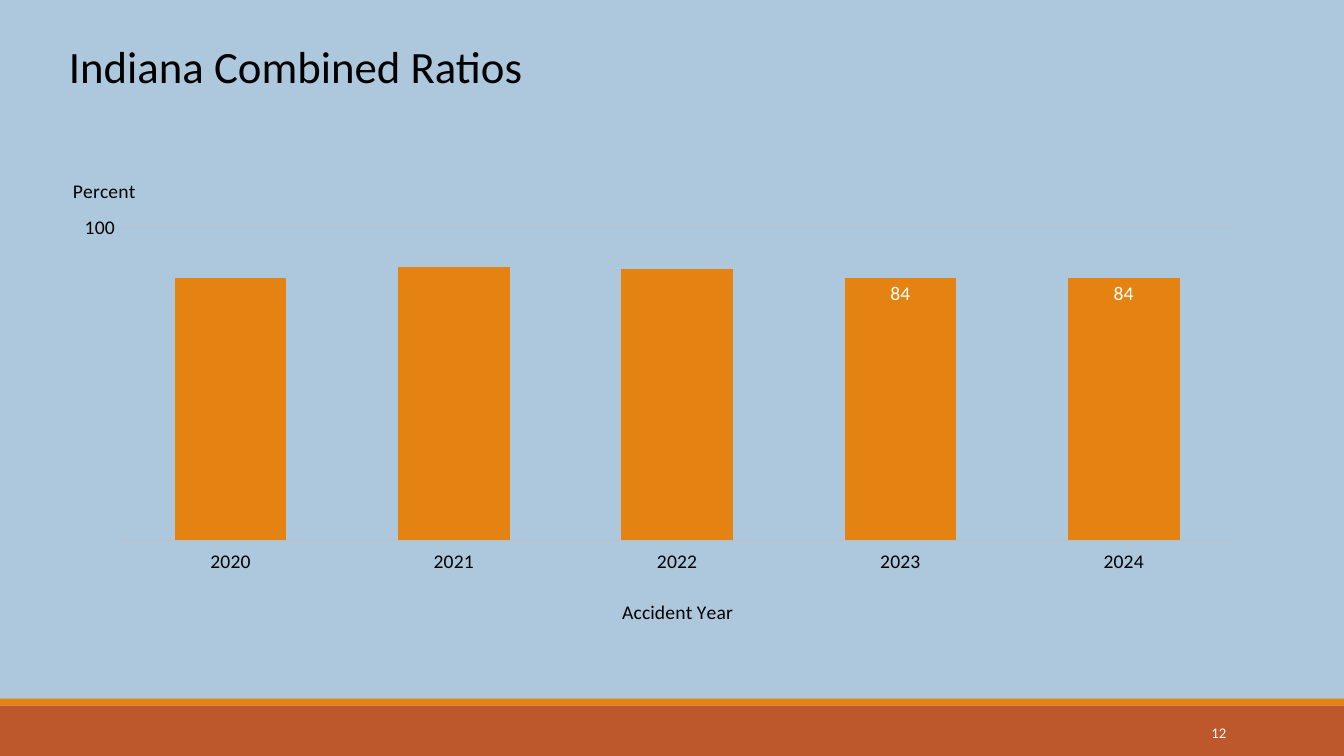
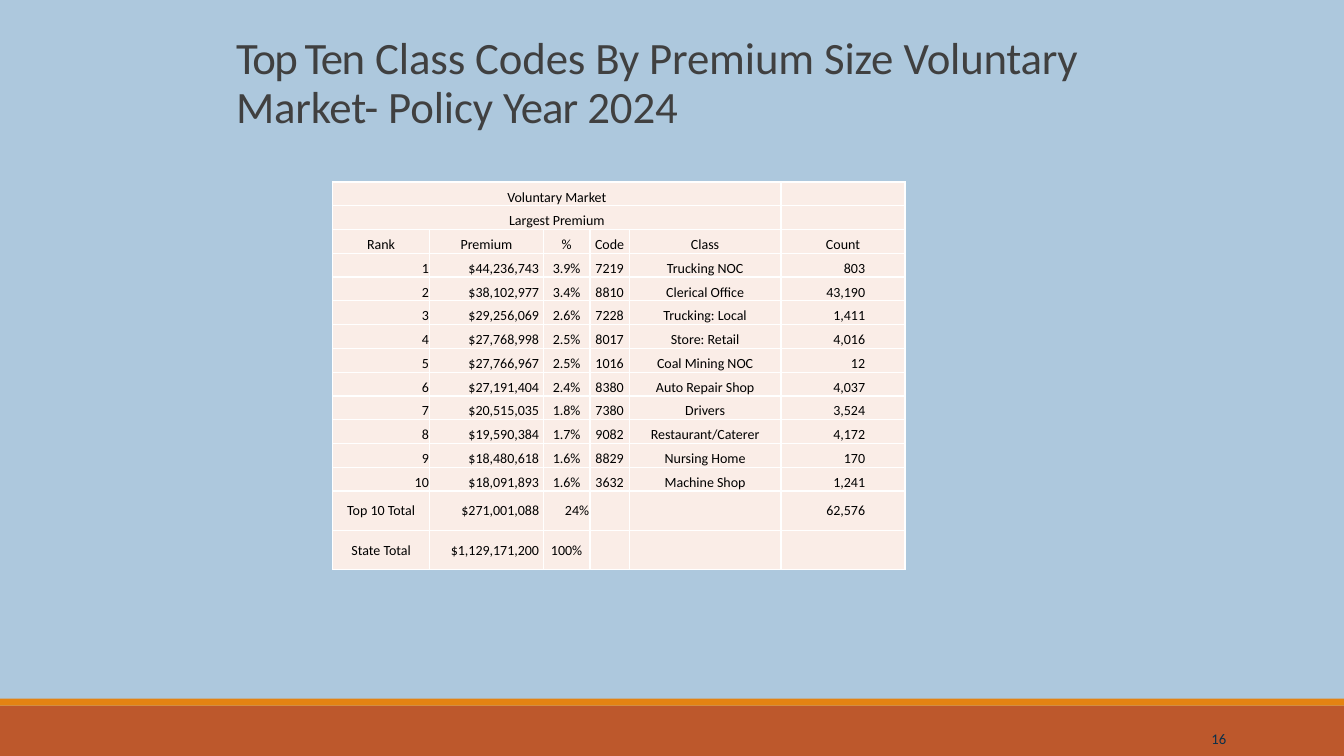
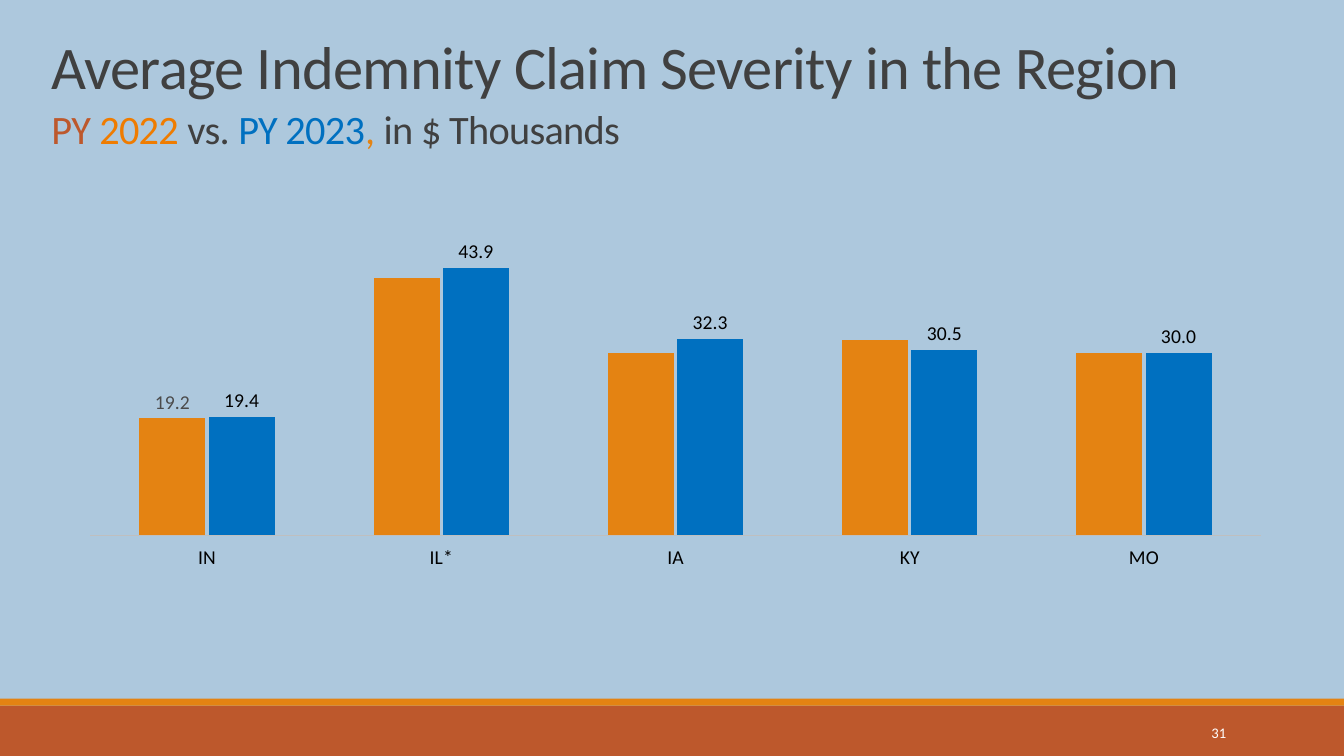
from lxml import etree
from pptx import Presentation
from pptx.chart.data import CategoryChartData
from pptx.dml.color import RGBColor
from pptx.enum.chart import XL_CHART_TYPE, XL_LABEL_POSITION, XL_TICK_LABEL_POSITION, XL_TICK_MARK
from pptx.enum.shapes import MSO_SHAPE
from pptx.enum.text import MSO_ANCHOR, MSO_AUTO_SIZE, PP_ALIGN
from pptx.oxml.ns import qn
from pptx.util import Pt

COLUMNS = XL_CHART_TYPE.COLUMN_CLUSTERED
INSIDE, OUTSIDE = XL_LABEL_POSITION.INSIDE_END, XL_LABEL_POSITION.OUTSIDE_END
LOW, NO_LABELS = XL_TICK_LABEL_POSITION.LOW, XL_TICK_LABEL_POSITION.NONE
NO_TICKS = XL_TICK_MARK.NONE
RECT = MSO_SHAPE.RECTANGLE
TOP, MIDDLE, BOTTOM = MSO_ANCHOR.TOP, MSO_ANCHOR.MIDDLE, MSO_ANCHOR.BOTTOM
LEFT, CENTER, RIGHT = PP_ALIGN.LEFT, PP_ALIGN.CENTER, PP_ALIGN.RIGHT

# Shared look
FONT = "Calibri"
SKY, RUST, ORANGE, BLUE = "ADC8DD", "BD582C", "E48312", "0070C0"
BLACK, WHITE, DARK, NAVY = "000000", "FFFFFF", "404040", "0A304A"
LIGHT, RULE, CREAM = "D9D9D9", "BFBFBF", "FAEDE7"
BANDS = [((0, 504, 960, 36), RUST), ((0, 499, 960, 5), ORANGE)]
NUMBER_BOX = (780, 508.5, 103, 29)

# Titles: paragraphs of runs (text, size, colour, letter spacing)
RATIO_TITLE = [[("Indiana Combined Ratios", 32, BLACK, 0)]]
CLASS_TITLE = [[(text, 32, DARK, gap) for text, gap in [
    ("Top Ten", -1.2), (" Class Codes By Premium Size ", -0.1),
    ("Voluntary Market- ", -0.2), ("Policy ", -0.1), ("Year ", -0.7), ("2024", -0.1)]]]
SEVERITY_TITLE = [
    [("Average Indemnity Claim Severity in the Region", 43.2, DARK, -0.5)],
    [(text, 28.8, color, -0.5) for text, color in [
        ("PY ", RUST), ("2022 ", "EF7C00"), ("vs. ", DARK), ("PY 2023", BLUE),
        (",", ORANGE), (" in $ Thousands", DARK)]]]

# Charts: series are (name, values, colour, {labelled point: label colour})
YEARS = ["2020", "2021", "2022", "2023", "2024"]
RATIOS = [("Series 1", [83.8, 87.5, 86.7, 84, 83.9], ORANGE, {3: WHITE, 4: WHITE})]
STATES = ["IN", "IL*", "IA", "KY", "MO"]
SEVERITY = [
    ("Series 1", [19.2, 42.3, 30, 32, 29.9], ORANGE, {0: "4B4B4B"}),
    ("Series 2", [19.4, 43.9, 32.3, 30.5, 30], BLUE, dict.fromkeys(range(5), BLACK))]

# Table
SPANNING = ["Voluntary Market", "Largest Premium"]
HEADINGS = ["Rank", "Premium", "%", "Code", "Class", "Count"]
CLASSES = [
    ("$44,236,743", "3.9%", "7219", "Trucking NOC", "803"),
    ("$38,102,977", "3.4%", "8810", "Clerical Office", "43,190"),
    ("$29,256,069", "2.6%", "7228", "Trucking: Local", "1,411"),
    ("$27,768,998", "2.5%", "8017", "Store: Retail", "4,016"),
    ("$27,766,967", "2.5%", "1016", "Coal Mining NOC", "12"),
    ("$27,191,404", "2.4%", "8380", "Auto Repair Shop", "4,037"),
    ("$20,515,035", "1.8%", "7380", "Drivers", "3,524"),
    ("$19,590,384", "1.7%", "9082", "Restaurant/Caterer", "4,172"),
    ("$18,480,618", "1.6%", "8829", "Nursing Home", "170"),
    ("$18,091,893", "1.6%", "3632", "Machine Shop", "1,241")]
TOTALS = [("Top 10 Total", "$271,001,088", "24%", "", "", "62,576"),
          ("State Total", "$1,129,171,200", "100%", "", "", "")]
COL_WIDTHS = [69.5, 81, 33.5, 28, 108.5, 88.5]
BODY_ALIGN = [RIGHT, RIGHT, CENTER, CENTER, CENTER, RIGHT]
RIGHT_MARGINS = [0.7, 3, 0.7, 0.7, 0.7, 28.5]


def rgb(color):
    return RGBColor.from_string(color)


def pts(box):
    return [Pt(v) for v in box]


def style(font, size, color):
    font.name, font.size, font.bold = FONT, Pt(size), False
    font.color.rgb = rgb(color)


def add_run(p, text, size, color, spacing=0):
    r = p.add_run()
    r.text = text
    style(r.font, size, color)
    if spacing:
        r._r.get_or_add_rPr().set("spc", str(round(spacing * 100)))


def add_slide(prs, number, title, box, anchor, line_spacing=1.0, gap=0,
              number_color=WHITE, number_anchor=MIDDLE):
    s = prs.slides.add_slide(prs.slide_layouts[5])
    # Bands
    for band, color in BANDS:
        sp = s.shapes.add_shape(RECT, *pts(band))
        sp.shadow.inherit = False
        sp.fill.solid()
        sp.fill.fore_color.rgb = rgb(color)
        sp.line.fill.background()
    # Slide number
    tf = s.shapes.add_textbox(*pts(NUMBER_BOX)).text_frame
    tf.word_wrap = True
    tf.vertical_anchor = number_anchor
    tf.paragraphs[0].alignment = RIGHT
    add_run(tf.paragraphs[0], number, 10.5, number_color)
    # Title
    sp = s.shapes.title
    sp.left, sp.top, sp.width, sp.height = pts(box)
    tf = sp.text_frame
    tf.auto_size = MSO_AUTO_SIZE.NONE
    tf.word_wrap = True
    tf.vertical_anchor = anchor
    for i, runs in enumerate(title):
        p = tf.add_paragraph() if i else tf.paragraphs[0]
        p.alignment = LEFT
        p.line_spacing = line_spacing
        p.space_before = Pt(gap if i else 0)
        for run in runs:
            add_run(p, *run)
    return s


def set_layout(parent, index, inner=False, **fractions):
    """Give a plot area or chart title a manual place, in fractions of the chart."""
    for old in parent.findall(qn("c:layout")):
        parent.remove(old)
    layout = etree.Element(qn("c:layout"))
    manual = etree.SubElement(layout, qn("c:manualLayout"))
    values = {"layoutTarget": "inner"} if inner else {}
    values.update(xMode="edge", yMode="edge", **fractions)
    for tag, value in values.items():
        etree.SubElement(manual, qn("c:" + tag), val=str(value))
    parent.insert(index, layout)


def add_chart_title(title, text, x, y):
    add_run(title.text_frame.paragraphs[0], text, 14, BLACK)
    set_layout(title._element, 1, x=x, y=y)


def add_columns(s, box, cats, series, fmt, top, gap, overlap, label_pos, plot_area):
    data = CategoryChartData(number_format=fmt)
    data.categories = cats
    for name, values, _, _ in series:
        data.add_series(name, values)
    chart = s.shapes.add_chart(COLUMNS, *pts(box), data).chart
    chart.has_legend = chart.has_title = False
    style(chart.font, 14, BLACK)
    plot = chart.plots[0]
    plot.gap_width, plot.overlap = gap, overlap
    plot.vary_by_categories = False
    for ser, (_, _, color, labels) in zip(plot.series, series):
        ser.format.fill.solid()
        ser.format.fill.fore_color.rgb = rgb(color)
        ser.data_labels.show_value = False
        for i, label_color in labels.items():
            label = ser.points[i].data_label
            style(label.font, 14, label_color)
            label.position = label_pos
    cat, val = chart.category_axis, chart.value_axis
    cat.major_tick_mark = val.major_tick_mark = NO_TICKS
    cat.tick_label_position = LOW
    cat.format.line.color.rgb = rgb(RULE)
    cat.format.line.width = Pt(1)
    val.minimum_scale, val.maximum_scale = 0, top
    val.has_major_gridlines = False
    val.format.line.fill.background()
    x, y, w, h = plot_area
    set_layout(chart.element.find(".//" + qn("c:plotArea")), 0, True, x=x, y=y, w=w, h=h)
    return chart


def fill_cell(cell, text, align, anchor, right_margin):
    cell.margin_left = cell.margin_top = Pt(0.7)
    cell.margin_right, cell.margin_bottom = Pt(right_margin), 0
    cell.vertical_anchor = anchor
    cell.fill.solid()
    cell.fill.fore_color.rgb = rgb(CREAM)
    p = cell.text_frame.paragraphs[0]
    p.alignment = align
    if text:
        add_run(p, text, 10, BLACK)
    else:
        etree.SubElement(p._p, qn("a:endParaRPr"), sz="1000")
    # Borders come before the fill
    for i, side in enumerate(("lnL", "lnR", "lnT", "lnB")):
        ln = etree.Element(qn("a:" + side), w=str(Pt(1)))
        fill = etree.SubElement(ln, qn("a:solidFill"))
        etree.SubElement(fill, qn("a:srgbClr"), val=WHITE)
        cell._tc.get_or_add_tcPr().insert(i, ln)


def add_class_table(s):
    header = [[text] + [""] * 5 for text in SPANNING] + [HEADINGS]
    body = [(str(rank), *row) for rank, row in enumerate(CLASSES, 1)]
    rows = header + body + TOTALS
    first_body, first_total = len(header), len(header) + len(body)
    heights = [17] * first_total + [28] * len(TOTALS)
    box = (237.5, 130, sum(COL_WIDTHS), sum(heights))
    table = s.shapes.add_table(len(rows), len(COL_WIDTHS), *pts(box)).table
    table.first_row = table.horz_banding = False
    for col, width in zip(table.columns, COL_WIDTHS):
        col.width = Pt(width)
    for i, (row, height) in enumerate(zip(rows, heights)):
        table.rows[i].height = Pt(height)
        for j, text in enumerate(row):
            align, margin = BODY_ALIGN[j], RIGHT_MARGINS[j]
            if i < first_body:
                align, margin = CENTER, 0.7
            elif i >= first_total and j == 0:
                align = CENTER
            elif text == "24%":
                align = RIGHT
            anchor = MIDDLE if i >= first_total else BOTTOM
            fill_cell(table.cell(i, j), text, align, anchor, margin)
    for i in range(len(SPANNING)):
        table.cell(i, 0).merge(table.cell(i, 4))


def main():
    prs = Presentation()
    prs.slide_width, prs.slide_height = Pt(960), Pt(540)
    background = prs.slide_master.background.fill
    background.solid()
    background.fore_color.rgb = rgb(SKY)

    # Combined ratios
    s = add_slide(prs, "12", RATIO_TITLE, (42, 24, 480, 46), TOP)
    chart = add_columns(s, (47, 79, 864, 371.5), YEARS, RATIOS, "0", 130, 100, 0,
                        INSIDE, (0.044, 0.045, 0.923, 0.793))
    val = chart.value_axis
    val.major_unit = 100
    val.has_major_gridlines = True
    val.major_gridlines.format.line.color.rgb = rgb(RULE)
    val.major_gridlines.format.line.width = Pt(1)
    val.tick_labels.number_format = '0;;""'
    val.tick_labels.number_format_is_linked = False
    chart.has_title = True
    add_chart_title(chart.chart_title, "Percent", 0.003, 0.123)
    add_chart_title(chart.category_axis.axis_title, "Accident Year", 0.457, 0.945)

    # Top ten class codes
    s = add_slide(prs, "16", CLASS_TITLE, (161.5, 50.5, 670.5, 48), BOTTOM, 0.9,
                  number_color=NAVY, number_anchor=BOTTOM)
    add_class_table(s)

    # Claim severity
    s = add_slide(prs, "31", SEVERITY_TITLE, (29.5, 93.5, 856, 19.5), BOTTOM, 0.85, 7.5)
    chart = add_columns(s, (47, 92, 866, 358.5), STATES, SEVERITY, "0.0", 60, 150, -5,
                        OUTSIDE, (0.02, 0.082, 0.966, 0.728))
    chart.value_axis.tick_label_position = NO_LABELS

    prs.save("out.pptx")


if __name__ == "__main__":
    main()
